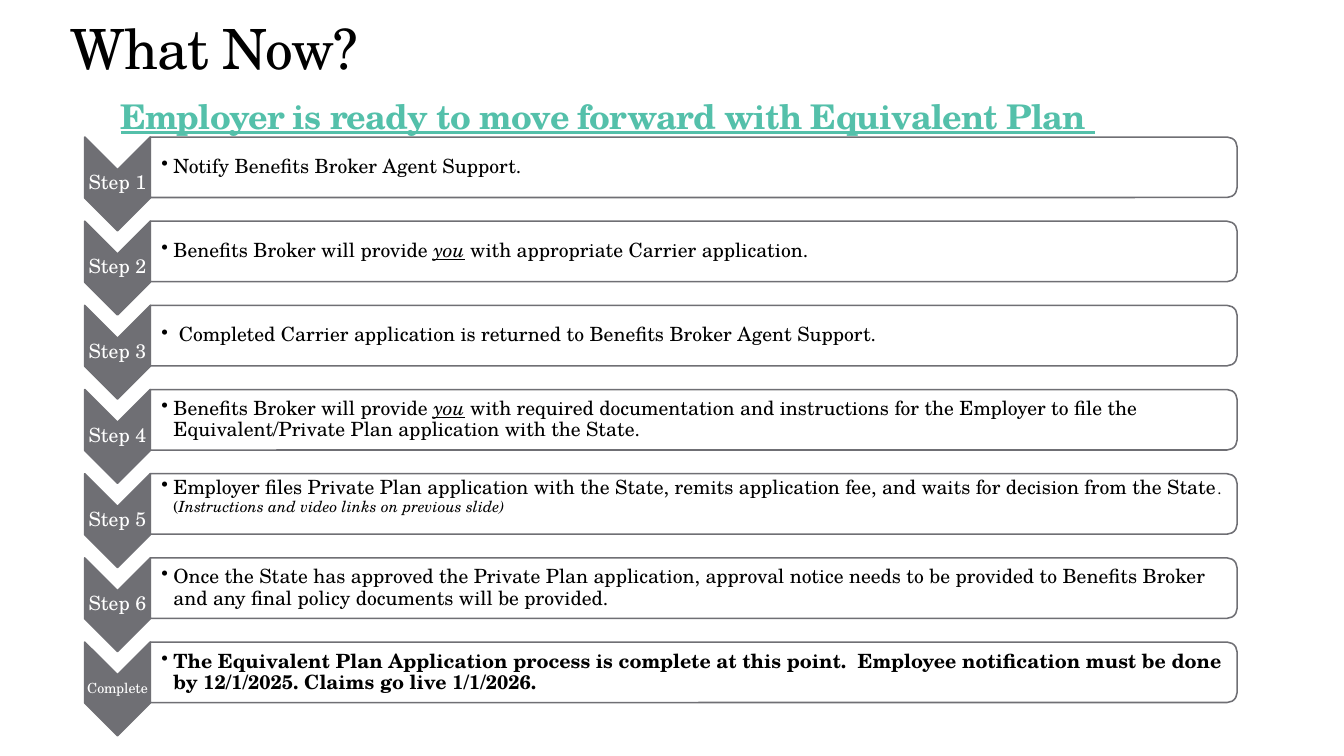
from pptx import Presentation, util as u
from pptx.dml.color import RGBColor
from pptx.enum import shapes, text
from pptx.oxml.ns import qn
from lxml import etree

FONT = "TeX Gyre Schola"
GRAY, WHITE, BLACK, TEAL = "6F6F74", "FFFFFF", "000000", "54C0AA"


def add_run(p, words, size, color, bold=False, italic=False, underline=False):
    r = p.add_run()
    r.text = words
    f = r.font
    f.name, f.size = FONT, u.Pt(size)
    f.bold, f.italic, f.underline = bold, italic, underline
    f.color.rgb = RGBColor.from_string(color)
    return r


def add_box(s, left, top, width, height, anchor, insets):
    tf = s.shapes.add_textbox(*map(u.Inches, (left, top, width, height))).text_frame
    tf.word_wrap = True
    tf.vertical_anchor = anchor
    tf.margin_left, tf.margin_top, tf.margin_right, tf.margin_bottom = map(u.Inches, insets)
    p = tf.paragraphs[0]
    p.line_spacing = 0.9
    return p


prs = Presentation()
prs.slide_width, prs.slide_height = u.Inches(13.33), u.Inches(7.5)
s = prs.slides.add_slide(prs.slide_layouts[6])
MIDDLE = text.MSO_ANCHOR.MIDDLE

# Title, with the subtitle on a tabbed second line
p = add_box(s, 0.6, 0.25, 12, 1.2, text.MSO_ANCHOR.BOTTOM, (0.1, 0.05, 0.1, 0.05))
add_run(p, "What Now?", 39.6, BLACK)
p.add_line_break()
add_run(p, "\t", 39.6, BLACK)
add_run(p, "Employer is ready to move forward with Equivalent Plan ", 24.3, TEAL,
        bold=True, underline=True)
for r in p.runs:
    r.font._element.set("spc", "-50")

# Steps: label, label size, runs of (words, size, style)
YOU = ("you", 14, {"italic": True, "underline": True})
steps = [
    ("Step 1", 14, [("Notify Benefits Broker Agent Support.", 14, {})]),
    ("Step 2", 14, [("Benefits Broker will provide ", 14, {}), YOU,
                    (" with appropriate Carrier application.", 14, {})]),
    ("Step 3", 14, [(" Completed Carrier application is returned to Benefits Broker "
                     "Agent Support.", 14, {})]),
    ("Step 4", 14, [("Benefits Broker will provide ", 14, {}), YOU,
                    (" with required documentation and instructions for the Employer to file "
                     "the Equivalent/Private Plan application with the State.", 14, {})]),
    ("Step 5", 14, [("Employer files Private Plan application with the State, remits "
                     "application fee, and waits for decision from the State", 14, {}),
                    (". (", 11, {}),
                    ("Instructions and video links on previous slide)", 11, {"italic": True})]),
    ("Step 6", 14, [("Once the State has approved the Private Plan application, approval notice "
                     "needs to be provided to Benefits Broker and any final policy documents "
                     "will be provided.", 14, {})]),
    ("Complete", 10, [("The Equivalent Plan Application process is complete at this point.  "
                       "Employee notification must be done by 12/1/2025. Claims go live "
                       "1/1/2026.", 14, {"bold": True})]),
]
PITCH = 5.01 / 6

for i, (label, label_size, runs) in enumerate(steps):
    y = i * PITCH

    # Chevron and panel, both turned a quarter
    for kind, left, top, width, height, fill in (
            (shapes.MSO_SHAPE.CHEVRON, 0.7, 1.5, 0.93, 0.65, GRAY),
            (shapes.MSO_SHAPE.ROUND_2_SAME_RECTANGLE, 6.58, -3.73, 0.6, 10.78, WHITE)):
        sp = s.shapes.add_shape(kind, *map(u.Inches, (left, top + y, width, height)))
        sp.rotation = 90
        sp.shadow.inherit = False
        sp.fill.solid()
        sp.fill.fore_color.rgb = RGBColor.from_string(fill)
        sp.line.color.rgb = RGBColor.from_string(GRAY)
        sp.line.width = u.Pt(1.1)
    # The panel is slightly see-through
    color = sp._element.spPr.find(qn("a:solidFill"))[0]
    etree.SubElement(color, qn("a:alpha")).set("val", "90000")

    # Step label
    p = add_box(s, 0.84, 1.68 + y, 0.65, 0.28, MIDDLE, [0.01] * 4)
    p.alignment = text.PP_ALIGN.CENTER
    p.space_after = u.Pt(label_size * 0.35)
    add_run(p, label, label_size, WHITE)

    # Bulleted instruction; the one with a side note starts at the top
    anchor = text.MSO_ANCHOR.TOP if label == "Step 5" else MIDDLE
    p = add_box(s, 1.49, 1.39 + y, 10.75, 0.54, anchor, (0.11, 0.01, 0.01, 0.01))
    p.space_after = u.Pt(2)
    pPr = p._p.get_or_add_pPr()
    pPr.set("marL", str(u.Inches(0.12)))
    pPr.set("indent", str(u.Inches(-0.12)))
    etree.SubElement(pPr, qn("a:buChar")).set("char", "•")
    for words, size, style in runs:
        add_run(p, words, size, BLACK, **style)

prs.save("out.pptx")
